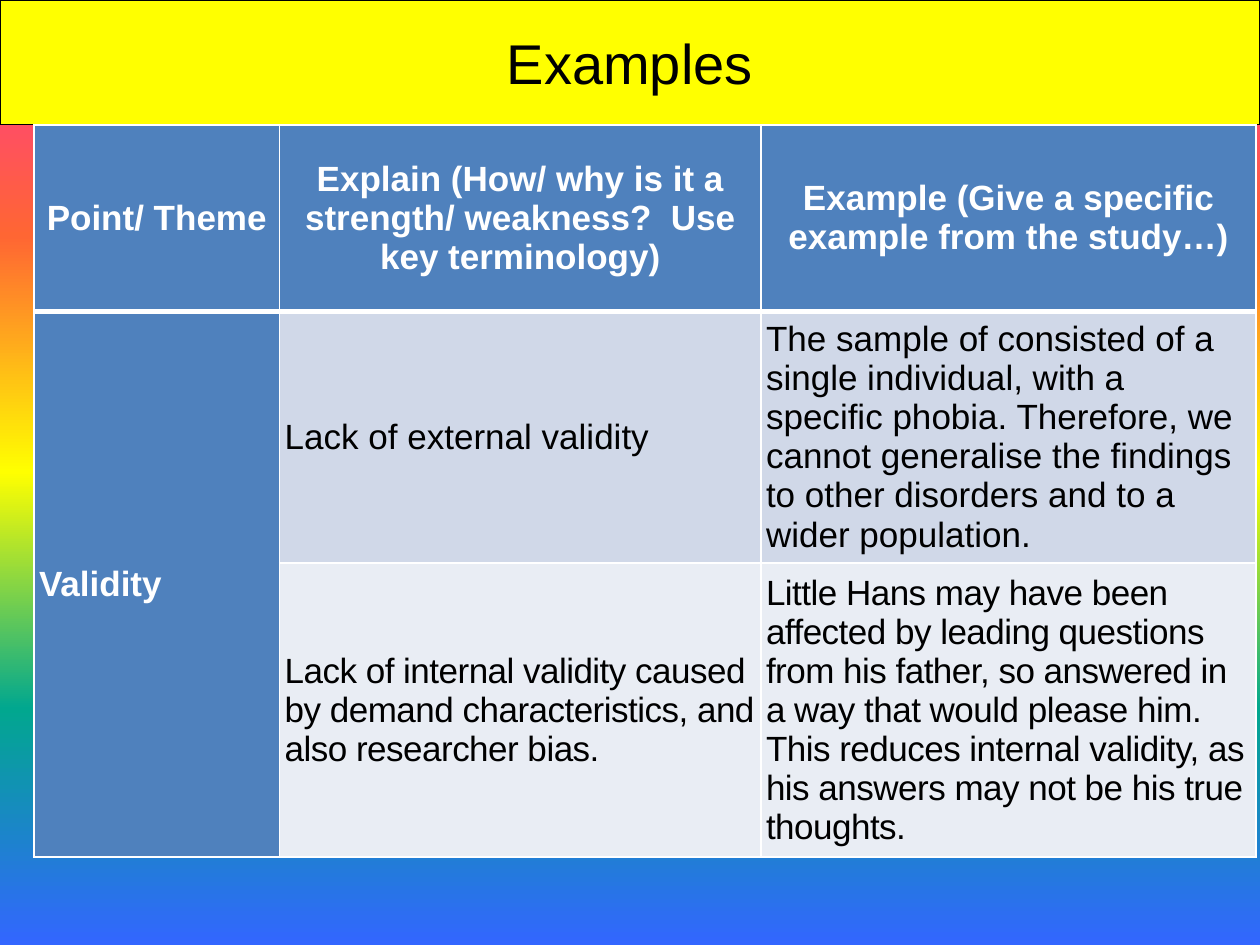
from dataclasses import dataclass

import pptx
import pptx.dml.color
import pptx.enum.shapes
import pptx.enum.text
import pptx.oxml
import pptx.oxml.ns
import pptx.util
from pptx.util import Inches

FONT = "Arial"
BLACK, WHITE, YELLOW, BLUE = "000000", "FFFFFF", "FFFF00", "4F81BD"
RAINBOW = ["FF3399", "FF6633", "FFFF00", "01A78F", "3366FF"]
COLUMN_WIDTHS = [1.95, 3.82, 3.93]
CENTER = pptx.enum.text.PP_ALIGN.CENTER
LEFT = pptx.enum.text.PP_ALIGN.LEFT
MIDDLE = pptx.enum.text.MSO_ANCHOR.MIDDLE


@dataclass
class TableRow:
    height: float
    fill: str
    texts: list[str]
    spacing: float = 0


ROWS = [
    TableRow(1.48, BLUE, [
        "Point/ Theme",
        "Explain (How/ why is it a strength/ weakness?  Use key terminology)",
        "Example (Give a specific example from the study…)",
    ]),
    TableRow(2, "D0D8E8", [
        "Validity",
        "Lack of external validity",
        "The sample of consisted of a single individual, with a specific phobia. "
        "Therefore, we cannot generalise the findings to other disorders and to a "
        "wider population.",
    ]),
    TableRow(2.33, "E9EDF4", [
        "",
        "Lack of internal validity caused by demand characteristics, and also "
        "researcher bias.",
        "Little Hans may have been affected by leading questions from his father, so "
        "answered in a way that would please him. This reduces internal validity, as "
        "his answers may not be his true thoughts.",
    ], spacing=-0.3),
]


def color(value: str) -> pptx.dml.color.RGBColor:
    return pptx.dml.color.RGBColor.from_string(value)


def fill_solid(target, value: str) -> None:
    target.fill.solid()
    target.fill.fore_color.rgb = color(value)


def write_text(text_frame, text: str, size: float, ink: str, alignment,
               bold: bool = False, spacing: float = 0) -> None:
    text_frame.text = text
    paragraph = text_frame.paragraphs[0]
    paragraph.alignment = alignment
    for run in paragraph.runs:
        run.font.name = FONT
        run.font.size = pptx.util.Pt(size)
        run.font.bold = bold
        run.font.color.rgb = color(ink)
        if spacing:
            run._r.get_or_add_rPr().set("spc", str(round(spacing * 100)))


def paint_background(slide) -> None:
    fill = slide.background.fill
    fill.gradient()
    fill.gradient_angle = 270
    stops = slide.element.find(".//" + pptx.oxml.ns.qn("a:gsLst"))
    for stop in list(stops):
        stops.remove(stop)
    step = 100000 // (len(RAINBOW) - 1)
    for index, value in enumerate(RAINBOW):
        stops.append(pptx.oxml.parse_xml(
            f'<a:gs {pptx.oxml.ns.nsdecls("a")} pos="{index * step}">'
            f'<a:srgbClr val="{value}"/></a:gs>'))


def add_title(slide, text: str) -> None:
    shape = slide.shapes.add_shape(pptx.enum.shapes.MSO_SHAPE.RECTANGLE,
                                   0, 0, Inches(10), Inches(0.99))
    shape.shadow.inherit = False
    fill_solid(shape, YELLOW)
    shape.line.color.rgb = color(BLACK)
    shape.line.width = pptx.util.Pt(0.75)
    shape.text_frame.vertical_anchor = MIDDLE
    write_text(shape.text_frame, text, 32, BLACK, CENTER)


def add_borders(cell, top: float, bottom: float) -> None:
    properties = cell._tc.get_or_add_tcPr()
    for side, width in (("L", 1), ("R", 1), ("T", top), ("B", bottom)):
        properties.append(pptx.oxml.parse_xml(
            f'<a:ln{side} {pptx.oxml.ns.nsdecls("a")} w="{pptx.util.Pt(width)}">'
            f'<a:solidFill><a:srgbClr val="{WHITE}"/></a:solidFill></a:ln{side}>'))


def add_examples_table(slide, rows: list[TableRow]) -> None:
    table = slide.shapes.add_table(
        len(rows), len(COLUMN_WIDTHS), Inches(0.27), Inches(0.99),
        Inches(sum(COLUMN_WIDTHS)), Inches(sum(row.height for row in rows))).table
    for column, width in zip(table.columns, COLUMN_WIDTHS):
        column.width = Inches(width)
    for row_index, row in enumerate(rows):
        table.rows[row_index].height = Inches(row.height)
        for column_index, text in enumerate(row.texts):
            cell = table.cell(row_index, column_index)
            heading = row_index == 0 or column_index == 0
            add_borders(cell, top=3 if row_index == 1 else 1,
                        bottom=3 if row_index == 0 else 1)
            fill_solid(cell, BLUE if heading else row.fill)
            cell.vertical_anchor = MIDDLE
            cell.margin_left = cell.margin_right = Inches(0.04)
            cell.margin_top = cell.margin_bottom = 0
            write_text(cell.text_frame, text, 20, WHITE if heading else BLACK,
                       CENTER if row_index == 0 else LEFT, heading, row.spacing)
    table.cell(1, 0).merge(table.cell(2, 0))


def main() -> None:
    presentation = pptx.Presentation()
    presentation.slide_width = Inches(10)
    presentation.slide_height = Inches(7.5)
    slide = presentation.slides.add_slide(presentation.slide_layouts[6])
    paint_background(slide)
    add_title(slide, "Examples")
    add_examples_table(slide, ROWS)
    presentation.save("out.pptx")


if __name__ == "__main__":
    main()
